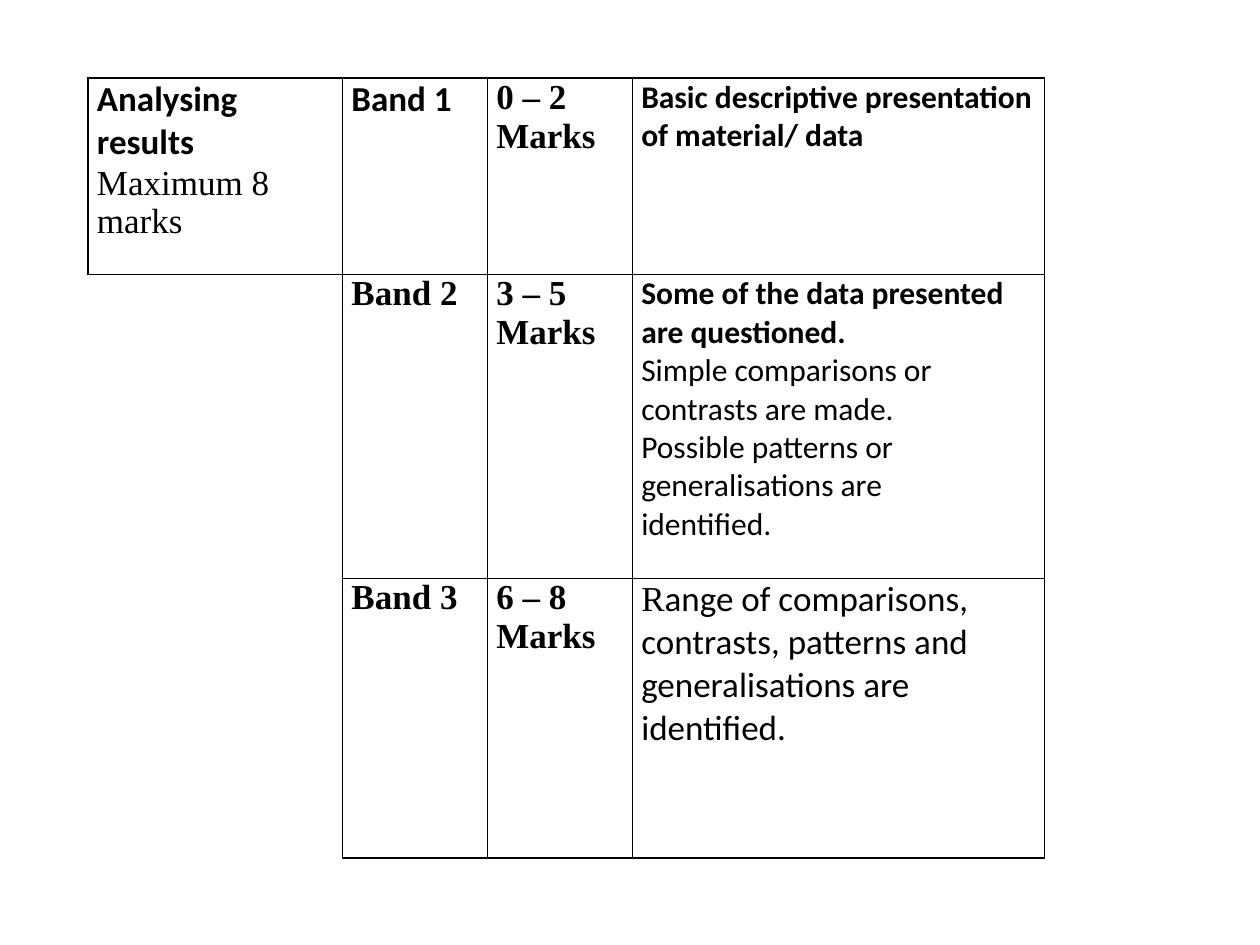
from dataclasses import dataclass

from lxml.etree import SubElement
from pptx import Presentation
from pptx.dml.color import RGBColor
from pptx.oxml.ns import qn
from pptx.util import Inches, Pt


@dataclass(frozen=True)
class Theme:
    """Colours, fonts and sizes of the marking grid."""

    ink: str = "000000"
    sans: str = "Calibri"
    serif: str = "Times New Roman"
    large: int = 20
    small: int = 18
    rule: int = 1
    side_inset: float = 0.07


@dataclass(frozen=True)
class Span:
    """A stretch of text in one style."""

    text: str
    font: str
    size: int
    bold: bool = False


class MarkingSlide:
    """Draws a marking grid on one slide in one theme."""

    def __init__(self, slide, theme):
        """Keep the slide and the theme."""
        self.slide = slide
        self.theme = theme

    def grid(self, left, top, columns, rows, content):
        """Add a table from column widths, row heights and cell content."""
        frame = self.slide.shapes.add_table(
            len(rows), len(columns), Inches(left), Inches(top),
            Inches(sum(columns)), Inches(sum(rows)))
        table = frame.table
        table.first_row = table.horz_banding = False
        for column, width in zip(table.columns, columns):
            column.width = Inches(width)
        for row, height in zip(table.rows, rows):
            row.height = Inches(height)
        for r, row_content in enumerate(content):
            for c, paragraphs in enumerate(row_content):
                cell = table.cell(r, c)
                self.fill_text(cell, paragraphs)
                sides = "LRTB" if paragraphs else "RT" if content[r - 1][c] else "R"
                self.border(cell, sides)
                cell.fill.background()

    def fill_text(self, cell, paragraphs):
        """Fill a cell with paragraphs made of spans."""
        cell.margin_left = cell.margin_right = Inches(self.theme.side_inset)
        cell.margin_top = cell.margin_bottom = 0
        for index, spans in enumerate(paragraphs):
            frame = cell.text_frame
            paragraph = frame.add_paragraph() if index else frame.paragraphs[0]
            for span in spans:
                run = paragraph.add_run()
                run.text = span.text
                run.font.name = span.font
                run.font.size = Pt(span.size)
                run.font.bold = span.bold
                run.font.color.rgb = RGBColor.from_string(self.theme.ink)

    def border(self, cell, visible):
        """Rule the visible sides of a cell and clear the others."""
        properties = cell._tc.get_or_add_tcPr()
        for side in "LRTB":
            line = SubElement(properties, qn(f"a:ln{side}"), w=str(Pt(self.theme.rule)))
            if side in visible:
                fill = SubElement(line, qn("a:solidFill"))
                SubElement(fill, qn("a:srgbClr"), val=self.theme.ink)
            else:
                SubElement(line, qn("a:noFill"))


def band_cells(theme, number, band_font, marks):
    """Return the band cell and the marks cell of one row."""
    band = [[Span(f"Band {number}", band_font, theme.large, True)]]
    return [band, [[Span(text, theme.serif, theme.large, True)] for text in (marks, "Marks")]]


def main():
    """Build and save the marking grid."""
    theme = Theme()
    deck = Presentation()
    deck.slide_width, deck.slide_height = Inches(10), Inches(7.5)
    page = MarkingSlide(deck.slides.add_slide(deck.slide_layouts[6]), theme)

    criterion = [
        [Span("Analysing results", theme.sans, theme.large, True)],
        [Span("Maximum 8 marks", theme.serif, theme.large)],
    ]
    basic = [[Span("Basic descriptive presentation of material/ data",
                   theme.sans, theme.small, True)]]
    questioned = [[Span("Some of the data presented are questioned.",
                        theme.sans, theme.small, True)]]
    questioned += [[Span(text, theme.sans, theme.small)] for text in (
        "Simple comparisons or contrasts are made.",
        "Possible patterns or generalisations are",
        "identified.")]
    ranged = [
        [Span("R", theme.serif, theme.large),
         Span("ange of comparisons, contrasts, patterns and", theme.sans, theme.large)],
        [Span("generalisations are identified.", theme.sans, theme.large)],
    ]
    page.grid(0.7, 0.62, [2.02, 1.15, 1.15, 3.27], [1.56, 2.41, 2.22], [
        [criterion, *band_cells(theme, 1, theme.sans, "0 – 2"), basic],
        [[], *band_cells(theme, 2, theme.serif, "3 – 5"), questioned],
        [[], *band_cells(theme, 3, theme.serif, "6 – 8"), ranged],
    ])
    deck.save("out.pptx")


if __name__ == "__main__":
    main()
